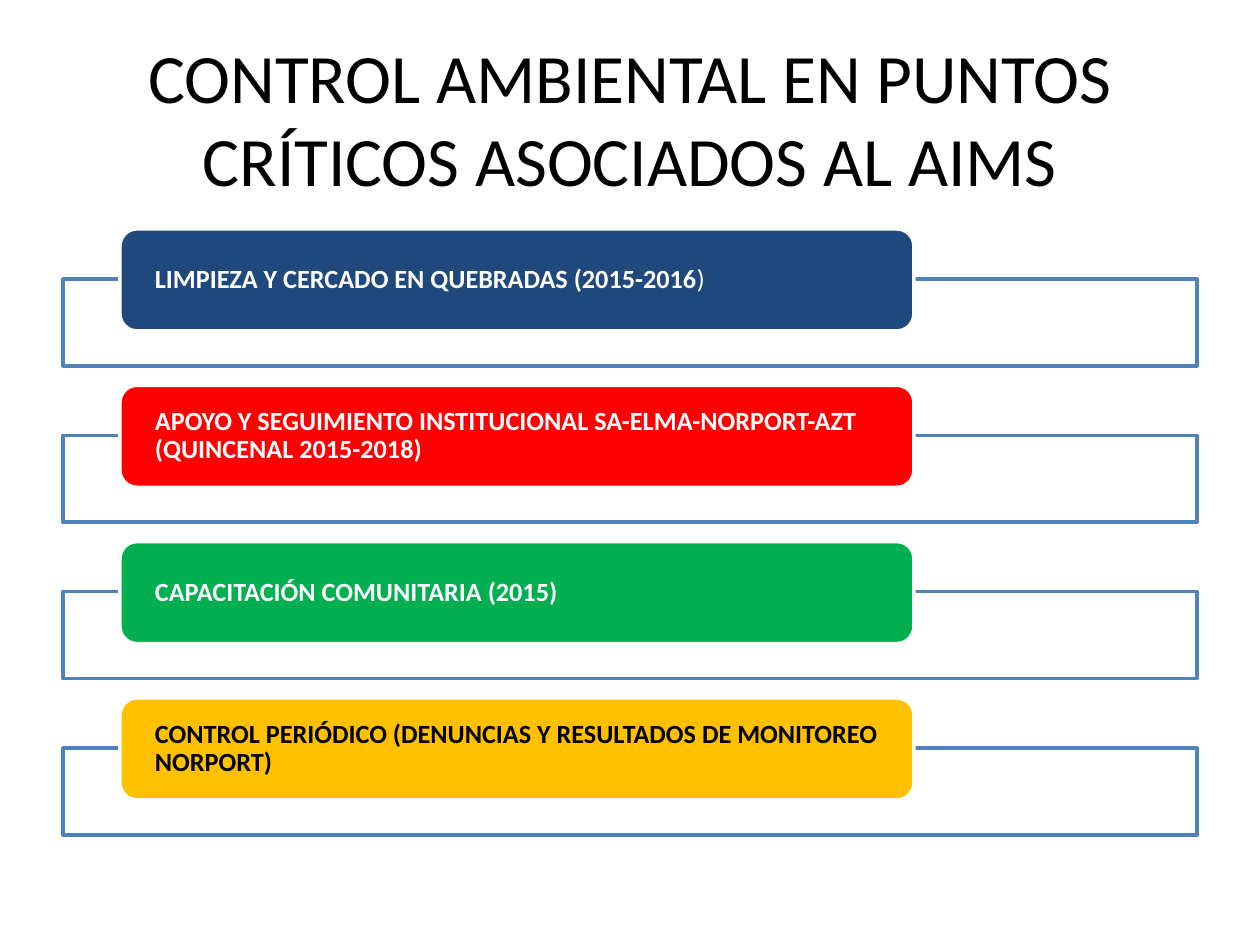
from dataclasses import dataclass

from lxml import etree
from pptx import Presentation
from pptx.dml.color import RGBColor
from pptx.enum.shapes import MSO_SHAPE
from pptx.enum.text import MSO_ANCHOR, MSO_AUTO_SIZE, PP_ALIGN
from pptx.oxml.ns import qn
from pptx.util import Emu, Pt

RECT, ROUNDED = MSO_SHAPE.RECTANGLE, MSO_SHAPE.ROUNDED_RECTANGLE
MIDDLE, NO_FIT = MSO_ANCHOR.MIDDLE, MSO_AUTO_SIZE.NONE
LEFT, CENTER = PP_ALIGN.LEFT, PP_ALIGN.CENTER
EMU_PER_PX = 914400 / 126


@dataclass(frozen=True)
class Theme:
    """Colours, font and type sizes of the slide."""
    font: str = "Calibri"
    title_size: float = 39.6
    label_size: int = 15
    line_width: int = 2
    white: str = "FFFFFF"
    black: str = "000000"
    frame: str = "4F81BD"
    navy: str = "1F497D"
    red: str = "FF0000"
    green: str = "00B050"
    amber: str = "FFC000"


THEME = Theme()
TITLE = "CONTROL AMBIENTAL EN PUNTOS CRÍTICOS ASOCIADOS AL AIMS"
ACTIONS = [
    ("LIMPIEZA Y CERCADO EN QUEBRADAS (2015-2016", ")", THEME.navy, THEME.white),
    ("APOYO Y SEGUIMIENTO INSTITUCIONAL SA-ELMA-NORPORT-AZT (QUINCENAL 2015-2018)",
     "", THEME.red, THEME.white),
    ("CAPACITACIÓN COMUNITARIA (2015)", "", THEME.green, THEME.white),
    ("CONTROL PERIÓDICO (DENUNCIAS Y RESULTADOS DE MONITOREO NORPORT)",
     "", THEME.amber, THEME.black),
]


def px(n):
    """Turn pixels into EMU."""
    return Emu(round(n * EMU_PER_PX))


def style_font(p, size, color):
    """Set the font of a whole paragraph."""
    p.font.name = THEME.font
    p.font.size = Pt(size)
    p.font.color.rgb = RGBColor.from_string(color)


def add_box(s, kind, box, fill, line):
    """Add a filled, outlined preset shape."""
    sp = s.shapes.add_shape(kind, *map(px, box))
    sp.shadow.inherit = False
    sp.fill.solid()
    sp.fill.fore_color.rgb = RGBColor.from_string(fill)
    sp.line.color.rgb = RGBColor.from_string(line)
    sp.line.width = Pt(THEME.line_width)
    return sp


def place_title(s, box):
    """Move and format the title placeholder."""
    sp = s.shapes.title
    sp.left, sp.top, sp.width, sp.height = map(px, box)
    tf = sp.text_frame
    tf.text = TITLE
    tf.word_wrap = True
    tf.auto_size = NO_FIT
    tf.vertical_anchor = MIDDLE
    p = tf.paragraphs[0]
    p.alignment = CENTER
    style_font(p, THEME.title_size, THEME.black)


def add_action(s, box, action):
    """Add a translucent frame with a coloured label over its top edge."""
    text, tail, fill, color = action
    x, y, w, h = box
    frame = add_box(s, RECT, (x, y + 50, w, h - 50), THEME.white, THEME.frame)
    srgb = frame.fill._xPr.find(f"{qn('a:solidFill')}/{qn('a:srgbClr')}")
    etree.SubElement(srgb, qn("a:alpha"), val="90000")

    label = add_box(s, ROUNDED, (x + 57, y, 794, 102), fill, THEME.white)
    tf = label.text_frame
    tf.word_wrap = True
    tf.vertical_anchor = MIDDLE
    tf.margin_left = tf.margin_right = px(30)
    tf.margin_top = tf.margin_bottom = 0
    p = tf.paragraphs[0]
    p.alignment = LEFT
    p.line_spacing = 0.9
    style_font(p, THEME.label_size, color)
    p.font.bold = True
    p.add_run().text = text
    if tail:
        r = p.add_run()
        r.text = tail
        r.font.bold = False


def add_actions(s, box):
    """Spread the actions evenly from top to bottom of the box."""
    x, y, w, h = box
    row = 137
    pitch = (h - row) / (len(ACTIONS) - 1)
    for i, action in enumerate(ACTIONS):
        add_action(s, (x, y + i * pitch, w, row), action)


def main():
    """Build and save the slide."""
    prs = Presentation()
    prs.slide_width, prs.slide_height = px(1260), px(945)
    s = prs.slides.add_slide(prs.slide_layouts[5])
    place_title(s, (63, 38, 1134, 158))
    add_actions(s, (63, 229, 1134, 606))
    prs.save("out.pptx")


if __name__ == "__main__":
    main()
